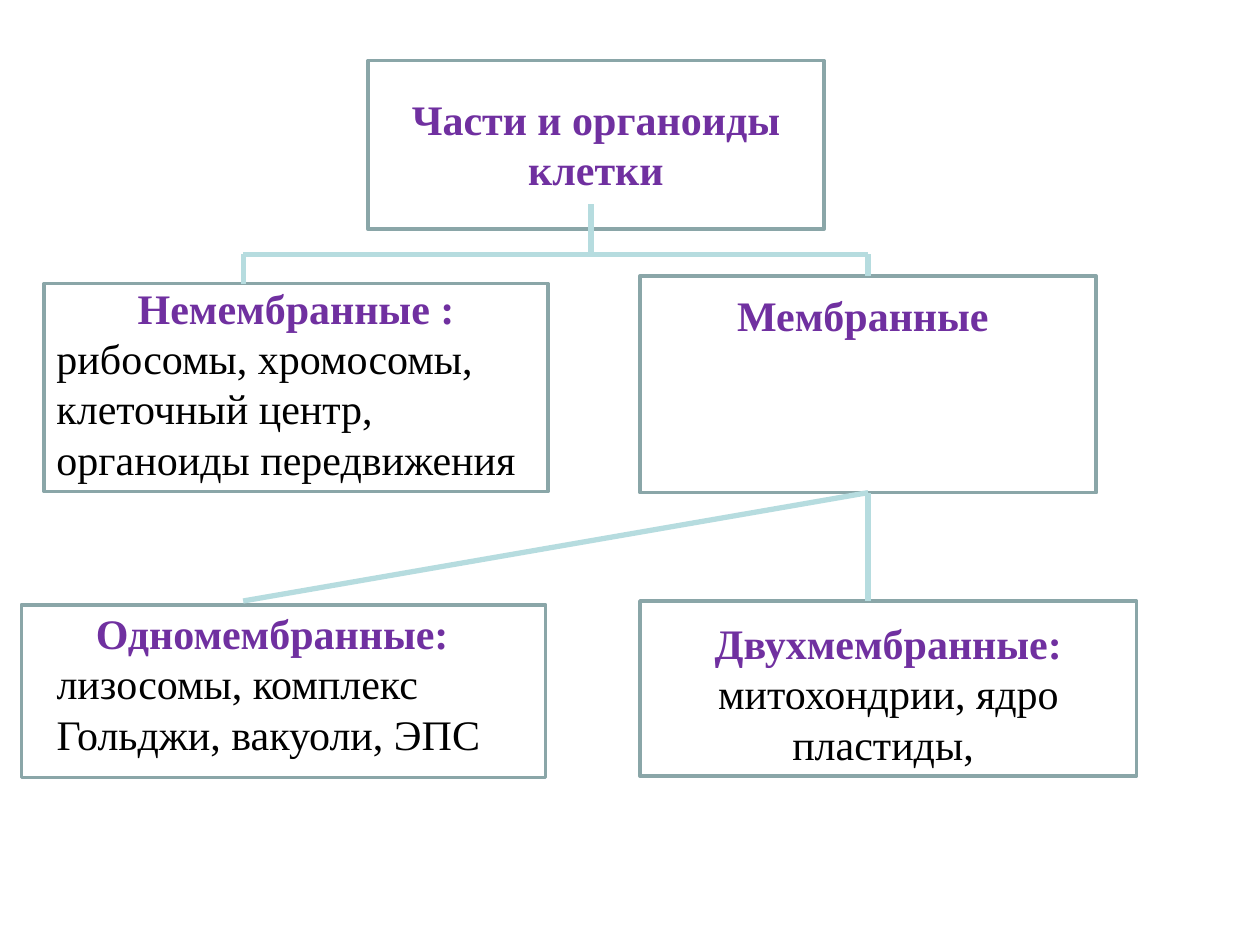
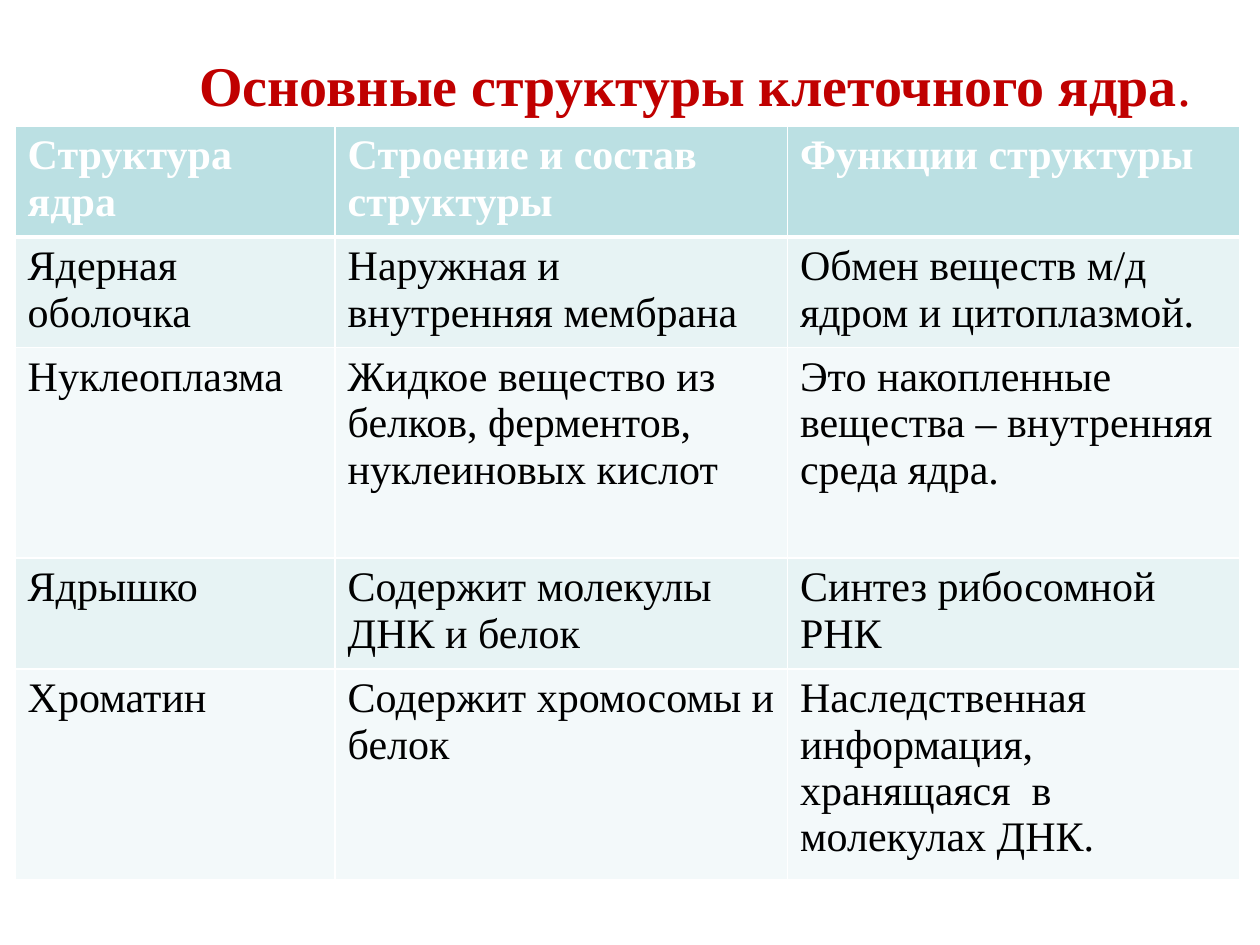
import pptx
import pptx.util
import pptx.dml.color
import pptx.enum.shapes
import pptx.enum.text
import pptx.oxml.ns
from lxml import etree

Inches = pptx.util.Inches
Pt = pptx.util.Pt
SHAPES = pptx.enum.shapes.MSO_SHAPE
ALIGN = pptx.enum.text.PP_ALIGN
qn = pptx.oxml.ns.qn

FONT = "Times New Roman"
PURPLE, RED, BLACK, WHITE = "7030A0", "C00000", "000000", "FFFFFF"
FRAME, LINK = "8AA6A8", "B6DCDF"
HEADER_FILL, BAND_FILLS = "BBE0E3", ("E7F3F4", "F3F9FA")

# Left, top, width, height of each frame in the diagram
FRAMES = [
    (SHAPES.FLOWCHART_PROCESS, 0.35, 2.25, 4, 1.65),
    (SHAPES.FLOWCHART_PROCESS, 5.08, 2.19, 3.62, 1.72),
    (SHAPES.FLOWCHART_PROCESS, 0.17, 4.8, 4.16, 1.37),
    (SHAPES.FLOWCHART_PROCESS, 5.08, 4.77, 3.94, 1.39),
    (SHAPES.RECTANGLE, 2.92, 0.48, 3.62, 1.34),
]

# Box, heading, body text, body alignment
LABELS = [
    ((2.96, 0.69, 3.54, 0.91), "Части и органоиды клетки", None, None),
    ((0.35, 2.19, 4, 1.72), "Немембранные :",
     "рибосомы, хромосомы, клеточный центр, органоиды передвижения", ALIGN.LEFT),
    ((5.08, 2.25, 3.62, 0.5), "Мембранные ", None, None),
    ((0.35, 4.77, 3.62, 1.31), "Одномембранные:",
     "лизосомы, комплекс Гольджи, вакуоли, ЭПС", ALIGN.LEFT),
    ((5.24, 4.85, 3.62, 1.31), "Двухмембранные:",
     "митохондрии, ядро пластиды, ", ALIGN.CENTER),
]

COLUMN_WIDTHS = (2.54, 3.59, 3.59)
ROW_HEIGHTS = (0.88, 0.88, 1.67, 0.88, 1.67)
NUCLEUS_ROWS = [
    ("Структура ядра", "Строение и состав структуры", "Функции структуры"),
    ("Ядерная оболочка", "Наружная и внутренняя мембрана",
     "Обмен веществ м/д ядром и цитоплазмой."),
    ("Нуклеоплазма", "Жидкое вещество из белков, ферментов, нуклеиновых кислот",
     "Это накопленные вещества – внутренняя среда ядра."),
    ("Ядрышко", "Содержит молекулы ДНК и белок", "Синтез рибосомной РНК"),
    ("Хроматин", "Содержит хромосомы и белок",
     "Наследственная информация, хранящаяся  в молекулах ДНК."),
]


def color(value):
    return pptx.dml.color.RGBColor.from_string(value)


def style_font(font, value, bold=False, size=24):
    font.name = FONT
    font.size = Pt(size)
    font.bold = bold
    font.color.rgb = color(value)


def add_frame(slide, kind, *box):
    shape = slide.shapes.add_shape(kind, *map(Inches, box))
    shape.shadow.inherit = False
    shape.fill.background()
    shape.line.color.rgb = color(FRAME)
    shape.line.width = Pt(2)


def add_text_box(slide, box):
    frame = slide.shapes.add_textbox(*map(Inches, box)).text_frame
    frame.word_wrap = True
    return frame


def add_label(slide, box, heading, body, body_alignment):
    frame = add_text_box(slide, box)
    lines = [(heading, ALIGN.CENTER, PURPLE, True)]
    if body:
        lines.append((body, body_alignment, BLACK, False))
    for index, (text, alignment, value, bold) in enumerate(lines):
        paragraph = frame.add_paragraph() if index else frame.paragraphs[0]
        paragraph.text = text
        paragraph.alignment = alignment
        style_font(paragraph.font, value, bold)


def add_link(slide, *ends):
    connector = slide.shapes.add_connector(
        pptx.enum.shapes.MSO_CONNECTOR.STRAIGHT, *map(Inches, ends))
    connector.line.color.rgb = color(LINK)
    connector.line.width = Pt(3)
    properties = connector._element.find(qn("p:spPr"))
    etree.SubElement(properties, qn("a:effectLst"))


def add_borders(cell, row):
    properties = cell._tc.get_or_add_tcPr()
    widths = {"L": 1, "R": 1, "T": 3 if row == 1 else 1, "B": 3 if row == 0 else 1}
    for side, width in widths.items():
        line = etree.SubElement(properties, qn("a:ln" + side), w=str(Pt(width)))
        fill = etree.SubElement(line, qn("a:solidFill"))
        etree.SubElement(fill, qn("a:srgbClr"), val=WHITE)


def add_table(slide, left, top, rows):
    table = slide.shapes.add_table(
        len(rows), len(COLUMN_WIDTHS), Inches(left), Inches(top),
        Inches(sum(COLUMN_WIDTHS)), Inches(sum(ROW_HEIGHTS))).table
    for column, width in zip(table.columns, COLUMN_WIDTHS):
        column.width = Inches(width)
    for row, texts in enumerate(rows):
        table.rows[row].height = Inches(ROW_HEIGHTS[row])
        header = row == 0
        for column, text in enumerate(texts):
            cell = table.cell(row, column)
            add_borders(cell, row)
            cell.fill.solid()
            cell.fill.fore_color.rgb = color(
                HEADER_FILL if header else BAND_FILLS[(row - 1) % 2])
            cell.text = text
            style_font(cell.text_frame.paragraphs[0].font,
                       WHITE if header else BLACK, header)


def build_organelles_slide(slide):
    for frame in FRAMES:
        add_frame(slide, *frame)
    for label in LABELS:
        add_label(slide, *label)

    # Branches from the root, then from the membrane group
    root, left, right = 4.69, 1.93, 6.89
    fork, group_bottom, leaf_top = 2.02, 3.91, 4.77
    add_link(slide, root, 1.62, root, fork)
    add_link(slide, right, fork, left, fork)
    add_link(slide, left, fork, left, 2.25)
    add_link(slide, right, fork, right, 2.19)
    for leaf in (right, left):
        add_link(slide, right, group_bottom, leaf, leaf_top)


def build_nucleus_slide(slide):
    add_table(slide, 0.12, 1, NUCLEUS_ROWS)
    paragraph = add_text_box(slide, (1.03, 0.35, 8.98, 0.65)).paragraphs[0]
    paragraph.alignment = ALIGN.CENTER
    for text, bold in (("Основные структуры клеточного ядра", True), (".", False)):
        run = paragraph.add_run()
        run.text = text
        style_font(run.font, RED, bold, 32)


def main():
    presentation = pptx.Presentation()
    presentation.slide_width = Inches(10)
    presentation.slide_height = Inches(7.5)
    blank = presentation.slide_layouts[6]
    for build in (build_organelles_slide, build_nucleus_slide):
        build(presentation.slides.add_slide(blank))
    presentation.save("out.pptx")


if __name__ == "__main__":
    main()
